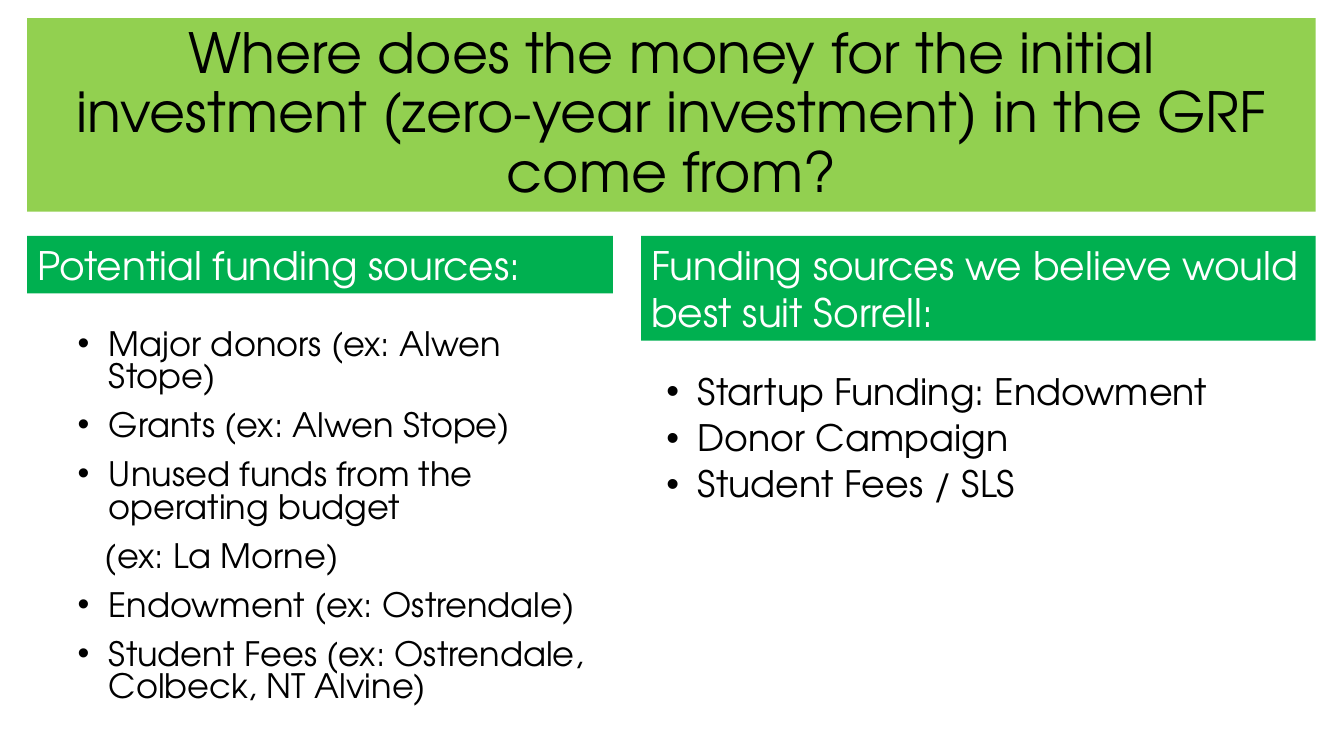
from lxml import etree
from pptx import Presentation
from pptx.dml.color import RGBColor
from pptx.enum.shapes import MSO_SHAPE
from pptx.enum.text import MSO_ANCHOR, MSO_AUTO_SIZE, PP_ALIGN
from pptx.oxml.ns import qn
from pptx.util import Inches, Pt

FONT = "TeX Gyre Adventor"
COLORS = {"title": "92D050", "heading": "00B050", "dark": "000000", "light": "FFFFFF"}
MARGIN = 0.27
RIGHT_COLUMN = 6.36
HANGING = 0.31

TITLE = ("Where does the money for the initial investment "
         "(zero-year investment) in the GRF come from?")
# Each list item is its text and whether it has a bullet.
POTENTIAL_SOURCES = [
    ("Major donors (ex: Alwen Stope)", True),
    ("Grants (ex: Alwen Stope)", True),
    ("Unused funds from the operating budget", True),
    ("(ex: La Morne)", False),
    ("Endowment (ex: Ostrendale)", True),
    ("Student Fees (ex: Ostrendale, Colbeck, NT Alvine)", True),
]
SUITABLE_SOURCES = [
    ("Startup Funding: Endowment", True),
    ("Donor Campaign", True),
    ("Student Fees / SLS", True),
]


def place(shape, left, top, width, height):
    shape.left, shape.top = Inches(left), Inches(top)
    shape.width, shape.height = Inches(width), Inches(height)


def fill_solid(shape, color):
    shape.fill.solid()
    shape.fill.fore_color.rgb = RGBColor.from_string(COLORS[color])


def write(paragraph, text, size, color="dark", align=PP_ALIGN.LEFT, spacing=1.0, before=0):
    paragraph.alignment = align
    paragraph.line_spacing = spacing
    paragraph.space_before = Pt(before)
    run = paragraph.add_run()
    run.text = text
    run.font.name = FONT
    run.font.size = Pt(size)
    run.font.color.rgb = RGBColor.from_string(COLORS[color])


def set_bullet(paragraph, indent, bulleted):
    """Set the left indent, with a hanging bullet or with none."""
    properties = paragraph._p.get_or_add_pPr()
    properties.set("marL", str(Inches(indent)))
    properties.set("indent", str(Inches(-HANGING if bulleted else 0)))
    if bulleted:
        etree.SubElement(properties, qn("a:buFont")).set("typeface", "Arial")
        etree.SubElement(properties, qn("a:buChar")).set("char", "•")
    else:
        etree.SubElement(properties, qn("a:buNone"))


def fill_title(title):
    place(title, MARGIN, 0.18, 12.78, 1.92)
    fill_solid(title, "title")
    frame = title.text_frame
    frame.auto_size = MSO_AUTO_SIZE.NONE
    frame.vertical_anchor = MSO_ANCHOR.MIDDLE
    write(frame.paragraphs[0], TITLE, 39.6, align=PP_ALIGN.CENTER, spacing=0.9)


def fill_list(body, items, box, indent, **text_format):
    place(body, *box)
    frame = body.text_frame
    frame.auto_size = MSO_AUTO_SIZE.NONE
    for index, (text, bulleted) in enumerate(items):
        paragraph = frame.add_paragraph() if index else frame.paragraphs[0]
        write(paragraph, text, **text_format)
        set_bullet(paragraph, indent if bulleted else indent - 0.04, bulleted)


def add_heading(slide, text, left, width, height):
    heading = slide.shapes.add_shape(MSO_SHAPE.RECTANGLE, 0, 0, 0, 0)
    place(heading, left, 2.34, width, height)
    heading.shadow.inherit = False
    fill_solid(heading, "heading")
    heading.line.fill.background()
    frame = heading.text_frame
    frame.word_wrap = True
    frame.vertical_anchor = MSO_ANCHOR.TOP
    write(frame.paragraphs[0], text, 28, color="light")


def main():
    presentation = Presentation()
    presentation.slide_width, presentation.slide_height = Inches(13.33), Inches(7.5)
    two_content = presentation.slide_layouts.get_by_name("Two Content")
    slide = presentation.slides.add_slide(two_content)
    title, left_list, right_list = slide.placeholders

    fill_title(title)
    fill_list(left_list, POTENTIAL_SOURCES, (MARGIN, 3.23, 5.8, 3.87), 0.71,
              size=24, spacing=0.8, before=12)
    fill_list(right_list, SUITABLE_SOURCES, (RIGHT_COLUMN, 3.66, 6.64, 3.8), 0.46,
              size=26, spacing=0.9, before=5)
    add_heading(slide, "Potential funding sources:", MARGIN, 5.81, 0.57)
    add_heading(slide, "Funding sources we believe would best suit Sorrell:",
                RIGHT_COLUMN, 6.69, 1.04)
    presentation.save("out.pptx")


if __name__ == "__main__":
    main()
